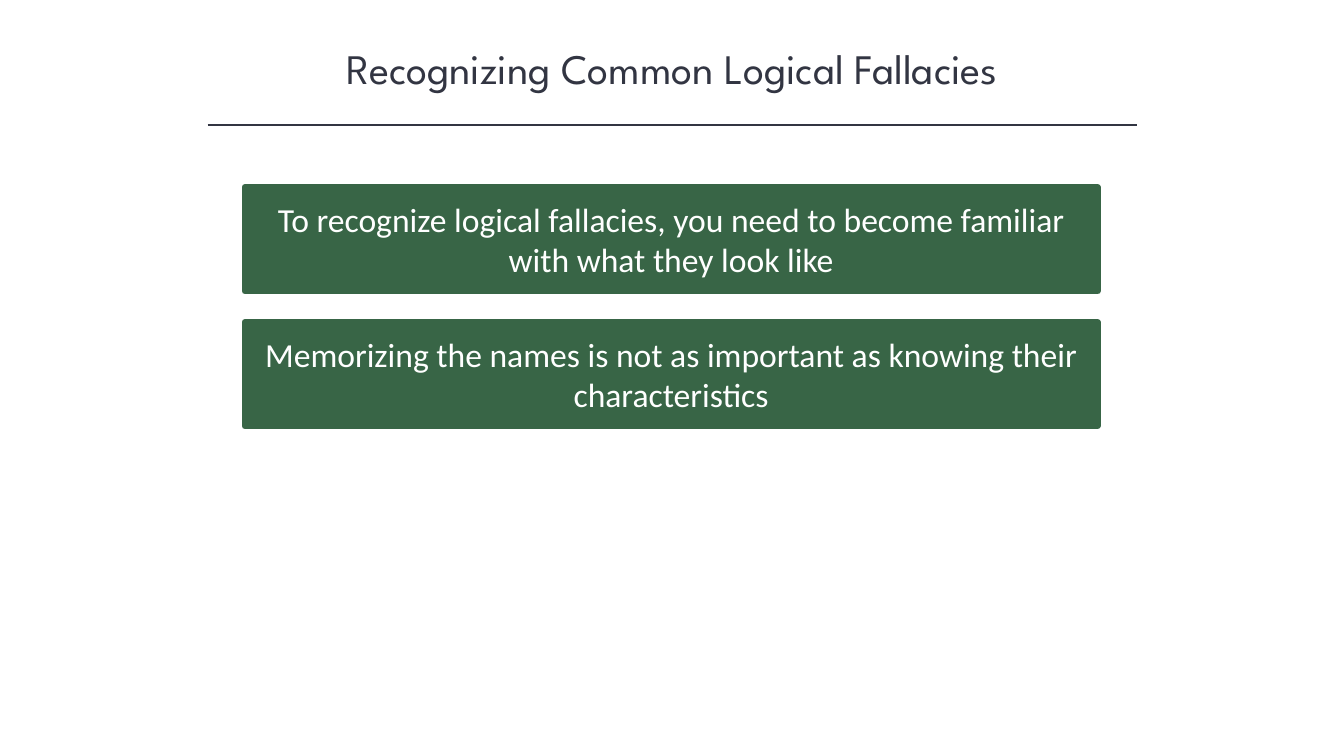
import pptx
import pptx.util
import pptx.dml.color
import pptx.enum.shapes
import pptx.enum.text
import pptx.oxml
import pptx.oxml.ns

Cm, Pt = pptx.util.Cm, pptx.util.Pt

# Content
TITLE = "Recognizing Common Logical Fallacies"
POINTS = [
    "To recognize logical fallacies, you need to become familiar with what they look like",
    "Memorizing the names is not as important as knowing their characteristics",
]

# Style
COLOURS = {"ink": "323542", "green": "386546", "white": "FFFFFF"}
TITLE_FONT = {"name": "League Spartan", "size": Pt(30), "bold": False}
POINT_FONT = {"name": "Calibri", "size": Pt(24), "bold": False}

# Layout in centimetres
TITLE_BOX = (4.24, 0.94, 25.4, 1.55)
RULE_LEFT, RULE_RIGHT, RULE_TOP = 5.23, 28.65, 3.15
BOX_LEFT, BOX_TOP, BOX_WIDTH, BOX_HEIGHT = 6.17, 4.72, 21.49, 2.62
BOX_STEP = 3.4


def rgb(name):
    return pptx.dml.color.RGBColor.from_string(COLOURS[name])


def write(sp, text, font, colour):
    tf = sp.text_frame
    tf.word_wrap = True
    p = tf.paragraphs[0]
    p.alignment = pptx.enum.text.PP_ALIGN.CENTER
    r = p.add_run()
    r.text = text
    for key, value in font.items():
        setattr(r.font, key, value)
    r.font.color.rgb = rgb(colour)
    return tf


def set_line(sp, colour, width):
    sp.line.color.rgb = rgb(colour)
    sp.line.width = Pt(width)


def main():
    prs = pptx.Presentation()
    prs.slide_width, prs.slide_height = Cm(33.87), Cm(19.05)
    s = prs.slides.add_slide(prs.slide_layouts[6])

    # Title
    title = s.shapes.add_textbox(*map(Cm, TITLE_BOX))
    tf = write(title, TITLE, TITLE_FONT, "ink")
    tf.auto_size = pptx.enum.text.MSO_AUTO_SIZE.SHAPE_TO_FIT_TEXT

    # Rule under the title
    rule = s.shapes.add_connector(
        pptx.enum.shapes.MSO_CONNECTOR.STRAIGHT,
        Cm(RULE_LEFT), Cm(RULE_TOP), Cm(RULE_RIGHT), Cm(RULE_TOP))
    set_line(rule, "ink", 1)
    sp_pr = rule._element.spPr
    sp_pr.append(pptx.oxml.parse_xml(
        "<a:effectLst %s/>" % pptx.oxml.ns.nsdecls("a")))

    # Point boxes
    for i, text in enumerate(POINTS):
        sp = s.shapes.add_shape(
            pptx.enum.shapes.MSO_SHAPE.RECTANGLE, Cm(BOX_LEFT),
            Cm(BOX_TOP + i * BOX_STEP), Cm(BOX_WIDTH), Cm(BOX_HEIGHT))
        sp.shadow.inherit = False
        sp.fill.solid()
        sp.fill.fore_color.rgb = rgb("green")
        set_line(sp, "green", 4.5)
        tf = write(sp, text, POINT_FONT, "white")
        tf.vertical_anchor = pptx.enum.text.MSO_ANCHOR.MIDDLE

    prs.save("out.pptx")


if __name__ == "__main__":
    main()
